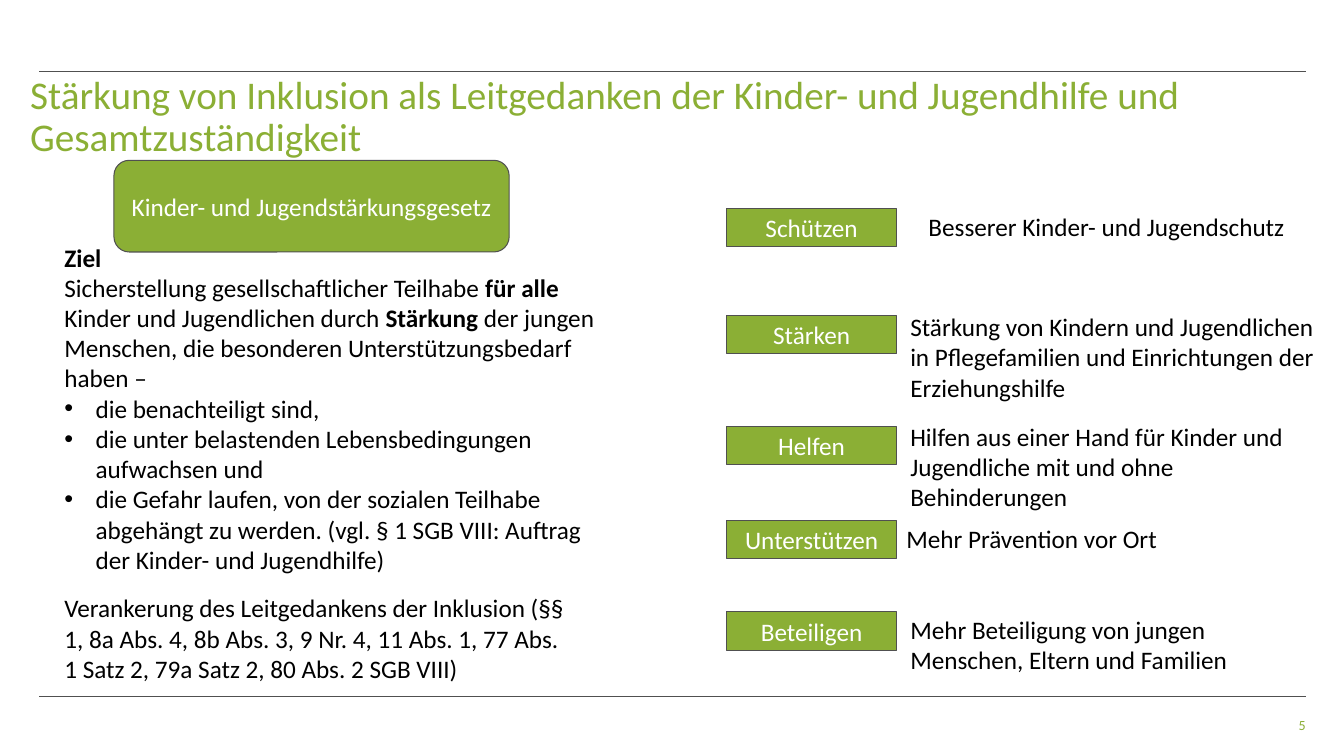
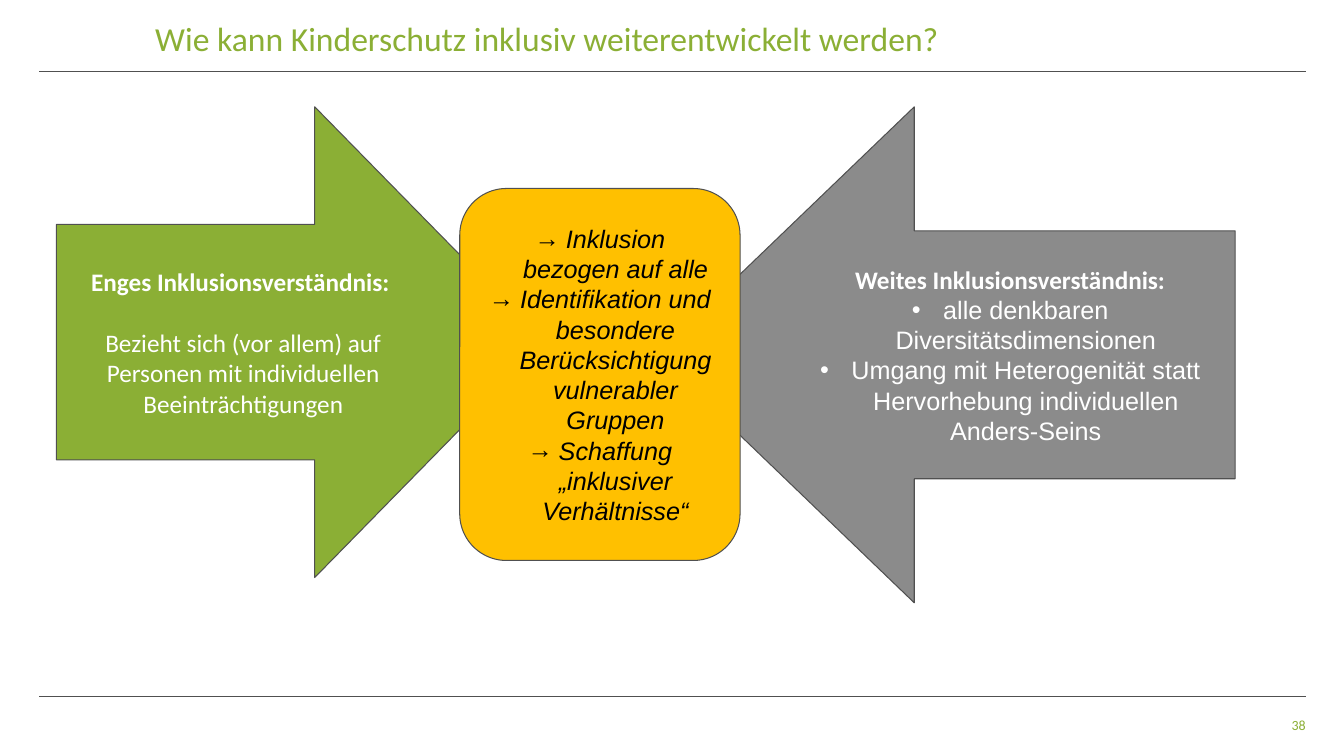
from dataclasses import dataclass

from lxml import etree
from pptx import Presentation
from pptx.dml.color import RGBColor
from pptx.enum.shapes import MSO_CONNECTOR, MSO_SHAPE
from pptx.enum.text import MSO_ANCHOR, PP_ALIGN
from pptx.oxml.ns import qn
from pptx.util import Emu, Pt

EMU_PER_PX = 9144  # 100 px to the inch
STRAIGHT = MSO_CONNECTOR.STRAIGHT
RECTANGLE, ROUNDED = MSO_SHAPE.RECTANGLE, MSO_SHAPE.ROUNDED_RECTANGLE
RIGHT_ARROW, LEFT_ARROW = MSO_SHAPE.RIGHT_ARROW, MSO_SHAPE.LEFT_ARROW
TOP, MIDDLE, BOTTOM = MSO_ANCHOR.TOP, MSO_ANCHOR.MIDDLE, MSO_ANCHOR.BOTTOM
LEFT, CENTER, RIGHT = PP_ALIGN.LEFT, PP_ALIGN.CENTER, PP_ALIGN.RIGHT


@dataclass(frozen=True)
class Theme:
    green: str = "8BAF35"
    grey: str = "8B8B8B"
    amber: str = "FFC000"
    outline: str = "505050"
    white: str = "FFFFFF"
    black: str = "000000"
    font: str = "Calibri"
    second_font: str = "Arial"
    title_size: int = 28
    short_title_size: int = 24
    body_size: int = 18
    number_size: int = 10
    outline_width: float = 0.75
    rule_width: float = 0.5
    hanging: int = 31


THEME = Theme()


def px(length):
    return Emu(length * EMU_PER_PX)


def rgb(value):
    return RGBColor.from_string(value)


# Text
def add_bullet(para, character):
    properties = para._p.get_or_add_pPr()
    properties.set("marL", str(px(THEME.hanging)))
    properties.set("indent", str(-px(THEME.hanging)))
    etree.SubElement(properties, qn("a:buFont")).set("typeface", THEME.second_font)
    etree.SubElement(properties, qn("a:buChar")).set("char", character)


def write(frame, text, *, size=THEME.body_size, color=THEME.black, font=THEME.font,
          italic=False, align=LEFT, bullet=None, before=0, line_spacing=None):
    """Add one paragraph; parts between ** marks are bold."""
    para = frame.paragraphs[0]
    if para.runs:
        para = frame.add_paragraph()
    if bullet:
        add_bullet(para, bullet)
    para.alignment = align
    if before:
        para.space_before = Pt(before)
    if line_spacing:
        para.line_spacing = line_spacing
    for position, part in enumerate(text.split("**")):
        if not part:
            continue
        span = para.add_run()
        span.text = part
        span.font.name = font
        span.font.size = Pt(size)
        span.font.bold = position % 2 == 1
        span.font.italic = italic
        span.font.color.rgb = rgb(color)


def add_text_box(page, left, top, width, height, *, anchor=TOP, inset=True):
    frame = page.shapes.add_textbox(px(left), px(top), px(width), px(height)).text_frame
    frame.word_wrap = True
    frame.vertical_anchor = anchor
    if not inset:
        frame.margin_left = frame.margin_right = 0
        frame.margin_top = frame.margin_bottom = 0
    return frame


# Shapes
def add_block(page, kind, left, top, width, height, fill, head=None):
    box = page.shapes.add_shape(kind, px(left), px(top), px(width), px(height))
    box.shadow.inherit = False
    box.fill.solid()
    box.fill.fore_color.rgb = rgb(fill)
    box.line.color.rgb = rgb(THEME.outline)
    box.line.width = Pt(THEME.outline_width)
    if head is not None:
        box.adjustments[1] = head
    box.text_frame.word_wrap = True
    box.text_frame.vertical_anchor = MIDDLE
    return box.text_frame


def add_rule(page, top):
    rule = page.shapes.add_connector(STRAIGHT, px(39), px(top), px(1295), px(top))
    rule.line.color.rgb = rgb(THEME.outline)
    rule.line.width = Pt(THEME.rule_width)
    etree.SubElement(rule._element.spPr, qn("a:effectLst"))


# Shared page: rules, title, page number
def add_page(deck, number, title, title_area, title_size):
    page = deck.slides.add_slide(deck.slide_layouts[6])
    for top in (71, 691):
        add_rule(page, top)
    write(add_text_box(page, *title_area, anchor=MIDDLE, inset=False), title,
          size=title_size, color=THEME.green, line_spacing=0.9)
    write(add_text_box(page, 1197, 713, 98, 15, anchor=BOTTOM, inset=False), str(number),
          size=THEME.number_size, color=THEME.green, align=RIGHT, line_spacing=0.9)
    return page


def build_law_page(deck):
    page = add_page(deck, 5, "Stärkung von Inklusion als Leitgedanken der Kinder- und "
                    "Jugendhilfe und Gesamtzuständigkeit",
                    (30, 69, 1256, 95), THEME.title_size)

    # Goal of the law
    goal = add_text_box(page, 54, 235, 564, 343)
    write(goal, "**Ziel**")
    write(goal, "Sicherstellung gesellschaftlicher Teilhabe **für alle** Kinder und "
          "Jugendlichen durch **Stärkung **der jungen Menschen, die besonderen "
          "Unterstützungsbedarf haben –")
    for group in (
        "die benachteiligt sind,",
        "die unter belastenden Lebensbedingungen aufwachsen und",
        "die Gefahr laufen, von der sozialen Teilhabe abgehängt zu werden. "
        "(vgl. § 1 SGB VIII: Auftrag der Kinder- und Jugendhilfe)",
    ):
        write(goal, group, bullet="•")
    write(add_text_box(page, 54, 583, 524, 101),
          "Verankerung des Leitgedankens der Inklusion (§§ 1, 8a Abs. 4, 8b Abs. 3, "
          "9 Nr. 4, 11 Abs. 1, 77 Abs. 1 Satz 2, 79a Satz 2, 80 Abs. 2 SGB VIII)")
    write(add_block(page, ROUNDED, 113, 159, 392, 91, THEME.green),
          "Kinder- und Jugendstärkungsgesetz", color=THEME.white, align=CENTER)

    # Five fields: label, its top, description and its area
    fields = (
        ("Schützen", 207, "Besserer Kinder- und Jugendschutz", (911, 205, 375, 40)),
        ("Stärken", 313, "Stärkung von Kindern und Jugendlichen in Pflegefamilien und "
         "Einrichtungen der Erziehungshilfe", (893, 304, 426, 101)),
        ("Helfen", 423, "Hilfen aus einer Hand für Kinder und Jugendliche mit und ohne "
         "Behinderungen", (893, 413, 419, 101)),
        ("Unterstützen", 516, "Mehr Prävention vor Ort", (889, 514, 335, 40)),
        ("Beteiligen", 607, "Mehr Beteiligung von jungen Menschen, Eltern und Familien",
         (893, 604, 419, 71)),
    )
    for label, top, description, area in fields:
        write(add_block(page, RECTANGLE, 721, top, 168, 38, THEME.green), label,
              color=THEME.white, align=CENTER)
        write(add_text_box(page, *area), description)


def build_inclusion_page(deck):
    page = add_page(deck, 38, "Wie kann Kinderschutz inklusiv weiterentwickelt werden?",
                    (154, 22, 904, 36), THEME.short_title_size)
    on_arrow = {"color": THEME.white, "align": CENTER}

    # Narrow understanding
    narrow = add_block(page, RIGHT_ARROW, 56, 106, 485, 467, THEME.green, head=0.49)
    write(narrow, "**Enges Inklusionsverständnis: **", **on_arrow)
    write(narrow, "Bezieht sich (vor allem) auf Personen mit individuellen "
          "Beeinträchtigungen", before=22, **on_arrow)

    # Wide understanding
    wide = add_block(page, LEFT_ARROW, 651, 106, 574, 492, THEME.grey, head=0.52)
    write(wide, "**Weites Inklusionsverständnis:**", **on_arrow)
    for aspect in (
        "alle denkbaren Diversitätsdimensionen",
        "Umgang mit Heterogenität statt Hervorhebung individuellen Anders-Seins",
    ):
        write(wide, aspect, font=THEME.second_font, bullet="•", **on_arrow)

    # Conclusions between the arrows
    center = add_block(page, ROUNDED, 456, 187, 278, 369, THEME.amber)
    for conclusion in (
        "Inklusion bezogen auf alle",
        "Identifikation und besondere Berücksichtigung vulnerabler Gruppen",
        "Schaffung „inklusiver Verhältnisse“",
    ):
        write(center, conclusion, font=THEME.second_font, italic=True, align=CENTER,
              bullet="→")


def main():
    deck = Presentation()
    deck.slide_width, deck.slide_height = px(1333), px(750)
    build_law_page(deck)
    build_inclusion_page(deck)
    deck.save("out.pptx")


if __name__ == "__main__":
    main()
